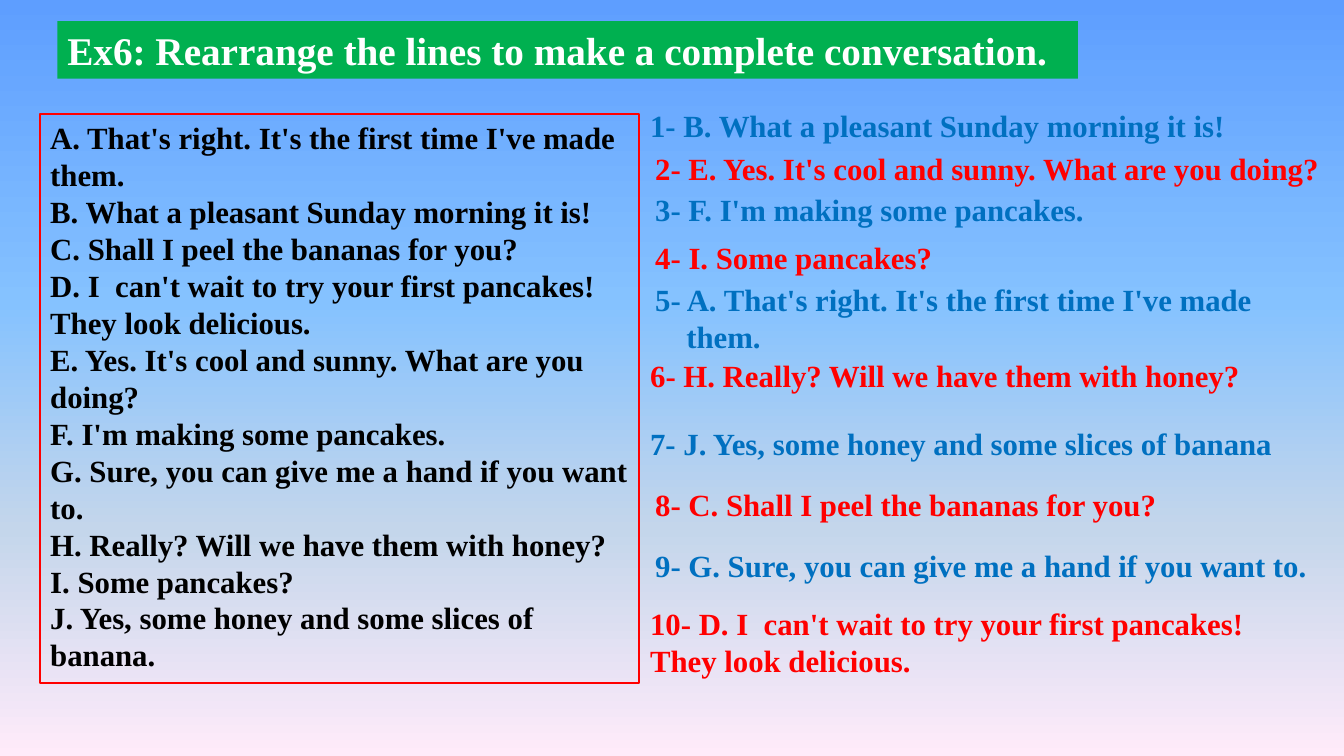
"""Build the slide for exercise 6: jumbled lines beside the reordered conversation."""
from copy import deepcopy
from dataclasses import dataclass

from pptx import Presentation
from pptx.dml.color import RGBColor
from pptx.enum import shapes, text
from pptx.slide import Slide
from pptx.util import Inches, Pt

COLORS = {
    "title_fill": "00B050",
    "title_text": "FFFFFF",
    "line_text": "000000",
    "first_speaker": "0070C0",
    "second_speaker": "FF0000",
    "frame": "FF0000",
}
SKY = [(0, "5E9EFF"), (0.4, "85C2FF"), (0.7, "C4D6EB"), (1, "FFEBFA")]
FONT = {"name": "Times New Roman", "bold": True}
CONTINUATION_INDENT = 0.31


@dataclass
class Panel:
    left: float
    top: float
    width: float
    height: float
    lines: list[str]
    color: str
    size: int = 22
    wrap: bool = True
    fill: str | None = None
    frame: str | None = None


@dataclass
class Answer:
    left: float
    top: float
    width: float
    lines: list[str]
    wrap: bool = False
    height: float = 0.47


TITLE = Panel(0.57, 0.21, 10.12, 0.57,
              ["Ex6: Rearrange the lines to make a complete conversation."],
              "title_text", size=28, fill="title_fill")

JUMBLED = Panel(0.4, 1.13, 5.94, 5.65, [
    "A. That's right. It's the first time I've made them.",
    "B. What a pleasant Sunday morning it is!",
    "C. Shall I peel the bananas for you?",
    "D. I  can't wait to try your first pancakes! They look delicious.",
    "E. Yes. It's cool and sunny. What are you doing?",
    "F. I'm making some pancakes.",
    "G. Sure, you can give me a hand if you want to.",
    "H. Really? Will we have them with honey?",
    "I. Some pancakes?",
    "J. Yes, some honey and some slices of banana.",
], "line_text", frame="frame")

CONVERSATION = [
    Answer(6.35, 1.01, 5.97, ["1- B. What a pleasant Sunday morning it is!"]),
    Answer(6.4, 1.44, 6.86, ["2- E. Yes. It's cool and sunny. What are you doing?"]),
    Answer(6.4, 1.84, 4.5, ["3- F. I'm making some pancakes."]),
    Answer(6.4, 2.32, 2.98, ["4- I. Some pancakes?"]),
    Answer(6.4, 2.74, 6.27,
           ["5- A. That's right. It's the first time I've made", "them."], height=0.84),
    Answer(6.35, 3.49, 6.12, ["6- H. Really? Will we have them with honey?"]),
    Answer(6.35, 4.16, 6.44, ["7- J. Yes, some honey and some slices of banana"]),
    Answer(6.4, 4.77, 5.23, ["8- C. Shall I peel the bananas for you?"]),
    Answer(6.4, 5.37, 6.74, ["9- G. Sure, you can give me a hand if you want to."]),
    Answer(6.35, 5.95, 6.67,
           ["10- D. I  can't wait to try your first pancakes! They look delicious."],
           wrap=True, height=0.84),
]


def rgb(name: str) -> RGBColor:
    return RGBColor.from_string(COLORS[name])


def paint_sky(slide: Slide) -> None:
    sky = slide.background.fill
    sky.gradient()
    sky.gradient_angle = 270
    stop_list = slide.element.xpath(".//a:gsLst")[0]
    while len(stop_list) < len(SKY):
        stop_list.append(deepcopy(stop_list[0]))
    for stop, (position, color) in zip(sky.gradient_stops, SKY):
        stop.position = position
        stop.color.rgb = RGBColor.from_string(color)


def write_lines(frame, lines: list[str], color: str, size: int, wrap: bool) -> None:
    layout = {"word_wrap": wrap, "vertical_anchor": text.MSO_ANCHOR.TOP,
              "auto_size": text.MSO_AUTO_SIZE.SHAPE_TO_FIT_TEXT}
    for key, value in layout.items():
        setattr(frame, key, value)
    for index, line in enumerate(lines):
        paragraph = frame.add_paragraph() if index else frame.paragraphs[0]
        paragraph.alignment = text.PP_ALIGN.LEFT
        run = paragraph.add_run()
        run.text = line
        for key, value in {**FONT, "size": Pt(size)}.items():
            setattr(run.font, key, value)
        run.font.color.rgb = rgb(color)


def draw_panel(slide: Slide, panel: Panel) -> None:
    bounds = map(Inches, (panel.left, panel.top, panel.width, panel.height))
    box = slide.shapes.add_shape(shapes.MSO_SHAPE.RECTANGLE, *bounds)
    box.shadow.inherit = False
    if panel.fill:
        box.fill.solid()
        box.fill.fore_color.rgb = rgb(panel.fill)
    else:
        box.fill.background()
    if panel.frame:
        box.line.color.rgb = rgb(panel.frame)
        box.line.width = Pt(1.5)
    else:
        box.line.fill.background()
    write_lines(box.text_frame, panel.lines, panel.color, panel.size, panel.wrap)


def draw_answer(slide: Slide, answer: Answer, color: str) -> None:
    bounds = map(Inches, (answer.left, answer.top, answer.width, answer.height))
    frame = slide.shapes.add_textbox(*bounds).text_frame
    write_lines(frame, answer.lines, color, 22, answer.wrap)
    for continuation in frame.paragraphs[1:]:
        properties = continuation._p.get_or_add_pPr()
        properties.set("marL", str(Inches(CONTINUATION_INDENT)))


def main() -> None:
    deck = Presentation()
    deck.slide_width, deck.slide_height = Inches(13.33), Inches(7.5)
    slide = deck.slides.add_slide(deck.slide_layouts[6])
    paint_sky(slide)
    draw_panel(slide, JUMBLED)
    speakers = ("first_speaker", "second_speaker")
    for turn, answer in enumerate(CONVERSATION):
        draw_answer(slide, answer, speakers[turn % 2])
    draw_panel(slide, TITLE)
    deck.save("out.pptx")


if __name__ == "__main__":
    main()
